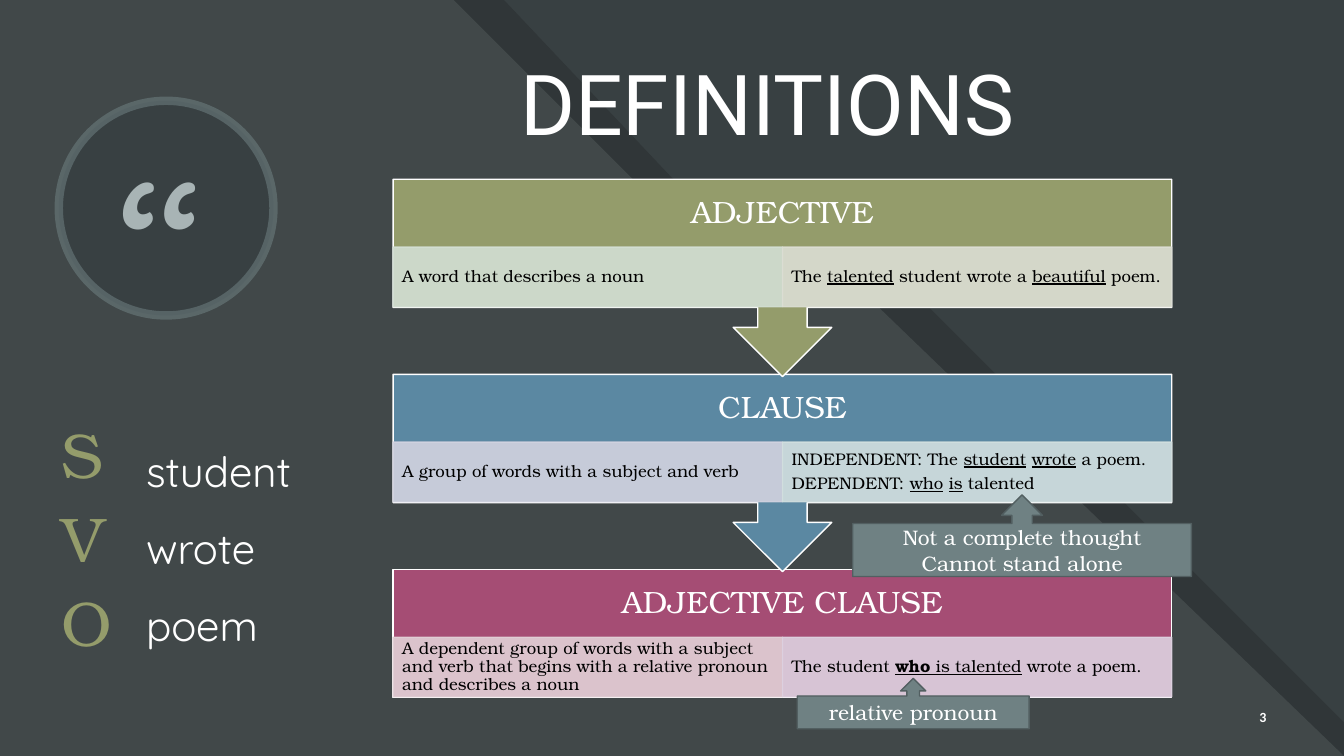
from lxml import etree
from pptx import Presentation
from pptx.dml.color import RGBColor
from pptx.enum.shapes import MSO_SHAPE
from pptx.enum.text import MSO_ANCHOR, MSO_AUTO_SIZE, PP_ALIGN
from pptx.oxml.ns import qn
from pptx.util import Inches, Pt

RECT, OVAL = MSO_SHAPE.RECTANGLE, MSO_SHAPE.OVAL
CALL = MSO_SHAPE.UP_ARROW_CALLOUT
TOP, MID = MSO_ANCHOR.TOP, MSO_ANCHOR.MIDDLE
LEFT, MIDDLE = PP_ALIGN.LEFT, PP_ALIGN.CENTER
FIXED = MSO_AUTO_SIZE.NONE
WIDE, HIGH = Inches(13.333), Inches(7.5)
COL, ROW = WIDE / 80, HIGH / 45
SERIF, SANS = "TeX Gyre Bonum", "Quicksand"
COLOR = {
    "back": "384042", "shade": "303638", "light": "414849",
    "ring": "6F8183", "quote": "A8B4B5", "edge": "525F61",
    "white": "FFFFFF", "black": "000000",
    "olive": "949C6B", "blue": "5B88A2", "rose": "A54D74",
    "mint": "D3DFD4", "sand": "DCDED4", "lilac": "D2D3E0",
    "aqua": "D2DFDF", "blush": "E1D0D6", "mauve": "DDD1E0",
}
LEAD, SPAN, FIRST, STEP = 23.4, 46.35, 10.67, 11.61
PANELS = [
    ("ADJECTIVE", "olive",
     [("mint", ["A word that describes a noun"]),
      ("sand", ["The _talented_ student wrote a _beautiful_ poem."])]),
    ("CLAUSE", "blue",
     [("lilac", ["A group of words with a subject and verb"]),
      ("aqua", ["INDEPENDENT: The _student_ _wrote_ a poem.",
                "DEPENDENT: _who_ _is_ talented"])]),
    ("ADJECTIVE CLAUSE", "rose",
     [("blush", ["A dependent group of words with a subject and verb that "
                 "begins with a relative pronoun and describes a noun"]),
      ("mauve", ["The student _*who__ is talented_ wrote a poem."])]),
]


def rgb(name):
    """Return the named colour."""
    return RGBColor.from_string(COLOR[name])


def grid(x, y, w, h):
    """Turn columns and rows into lengths."""
    return [round(n) for n in (x * COL, y * ROW, w * COL, h * ROW)]


def paint(part, name, alpha=100):
    """Give a fill or line a colour with some opacity."""
    part.solid()
    part.fore_color.rgb = rgb(name)
    if alpha < 100:
        for tone in part._xPr.iter(qn("a:srgbClr")):
            etree.SubElement(tone, qn("a:alpha"), val=str(alpha * 1000))


def style(shape, fill, line=None, width=1, alpha=(100, 100)):
    """Set the fill and outline of a shape."""
    shape.shadow.inherit = False
    paint(shape.fill, fill, alpha[0])
    if line:
        shape.line.width = Pt(width)
        paint(shape.line.fill, line, alpha[1])
    else:
        shape.line.fill.background()


def draw(slide, kind, box, *look, **more):
    """Add a styled preset shape."""
    shape = slide.shapes.add_shape(kind, *grid(*box))
    style(shape, *look, **more)
    return shape


def write(shape, lines, size, font=SERIF, color="white", align=LEFT,
          anchor=TOP, inset=(0.1, 0.05), bold=False, para=None):
    """Write lines, where _ marks underlined text and * bold text."""
    frame = shape.text_frame
    form = {"word_wrap": True, "auto_size": FIXED, "vertical_anchor": anchor,
            "margin_left": Inches(inset[0]), "margin_right": Inches(inset[0]),
            "margin_top": Inches(inset[1]), "margin_bottom": Inches(inset[1])}
    for key, value in form.items():
        setattr(frame, key, value)
    for i, line in enumerate(lines):
        block = frame.add_paragraph() if i else frame.paragraphs[0]
        for key, value in {"alignment": align, **(para or {})}.items():
            setattr(block, key, value)
        for j, piece in enumerate(line.split("_")):
            if not piece:
                continue
            run = block.add_run()
            run.text = piece.lstrip("*")
            look = {"size": Pt(size), "name": font,
                    "bold": bold or piece.startswith("*"),
                    "underline": j % 2 == 1}
            for key, value in look.items():
                setattr(run.font, key, value)
            run.font.color.rgb = rgb(color)


def label(slide, box, lines, size, **form):
    """Add a text box."""
    write(slide.shapes.add_textbox(*grid(*box)), lines, size, **form)


def slope(slide, shift, color):
    """Add a backdrop with a stepped diagonal edge."""
    end = min(79.6 + shift, 80)
    points = [(27 + shift, 0), (44.8 + shift, 17.8), (52.4 + shift, 17.8),
              (end, end - shift - 34.6), (end, 45), (0, 45)]
    path = slide.shapes.build_freeform(0, 0, scale=(COL, ROW))
    path.add_line_segments(points)
    style(path.convert_to_shape(), color)


def head(slide, box, text):
    """Place the title in front of the backdrop."""
    title = slide.shapes.title
    title.left, title.top, title.width, title.height = grid(*box)
    write(title, [text], 60, font="Roboto")
    slide.shapes._spTree.append(title._element)


def panel(slide, index, title, color, cells):
    """Add a term with its meaning and its example."""
    top = FIRST + index * STEP
    last = index == len(PANELS) - 1
    kind, tall = (RECT, 7.62) if last else (CALL, 11.75)
    base = draw(slide, kind, (LEAD, top, SPAN, tall), color, "white")
    base.rotation = 0 if last else 180
    label(slide, (LEAD, top, SPAN, 4.1), [title], 22, align=MIDDLE,
          anchor=MID, inset=(0.17, 0.17), para={"line_spacing": 0.9})
    half = SPAN / 2
    for i, (tint, lines) in enumerate(cells):
        box = LEAD + i * half, top + 4.04, half, 3.54
        cell = draw(slide, RECT, box, tint, tint, alpha=(90, 90))
        write(cell, lines, 12, color="black", anchor=MID, inset=(0.09, 0.02),
              para={"line_spacing": 0.9, "space_after": Pt(4.2)})


def note(slide, box, text):
    """Add a callout that points up."""
    shape = draw(slide, CALL, box, "ring", "edge")
    write(shape, [text], 15, align=MIDDLE, anchor=MID)


def main():
    """Build the slide."""
    deck = Presentation()
    deck.slide_width, deck.slide_height = WIDE, HIGH
    slide = deck.slides.add_slide(deck.slide_layouts[5])
    paint(slide.background.fill, "back")
    slope(slide, 2.5, "shade")
    slope(slide, 0, "light")
    draw(slide, OVAL, (3.5, 6, 12.78, 12.78), "back", "ring", 6,
         alpha=(100, 55))
    label(slide, (6.3, 6.06, 6.6, 18.8), ["“"], 184, font=SANS,
          color="quote", align=MIDDLE)
    label(slide, (73.86, 41.46, 2.64, 2.4), ["3"], 10, font="Calibri",
          align=MIDDLE, anchor=MID, bold=True)
    for index in reversed(range(len(PANELS))):
        panel(slide, index, *PANELS[index])
    head(slide, (30.36, 2.76, 32.46, 10.56), "DEFINITIONS")
    label(slide, (8.1, 24.66, 11.28, 13.92), ["student", "wrote", "poem"], 30,
          font=SANS, para={"line_spacing": Pt(55)})
    label(slide, (3.06, 23.94, 3.72, 15.42), "SVO", 45, color="olive",
          align=MIDDLE, para={"line_spacing": Pt(60)})
    note(slide, (50.76, 29.46, 20.16, 4.86),
         "Not a complete thought Cannot stand alone")
    note(slide, (47.46, 40.38, 13.8, 3), "relative pronoun")
    deck.save("out.pptx")


if __name__ == "__main__":
    main()
